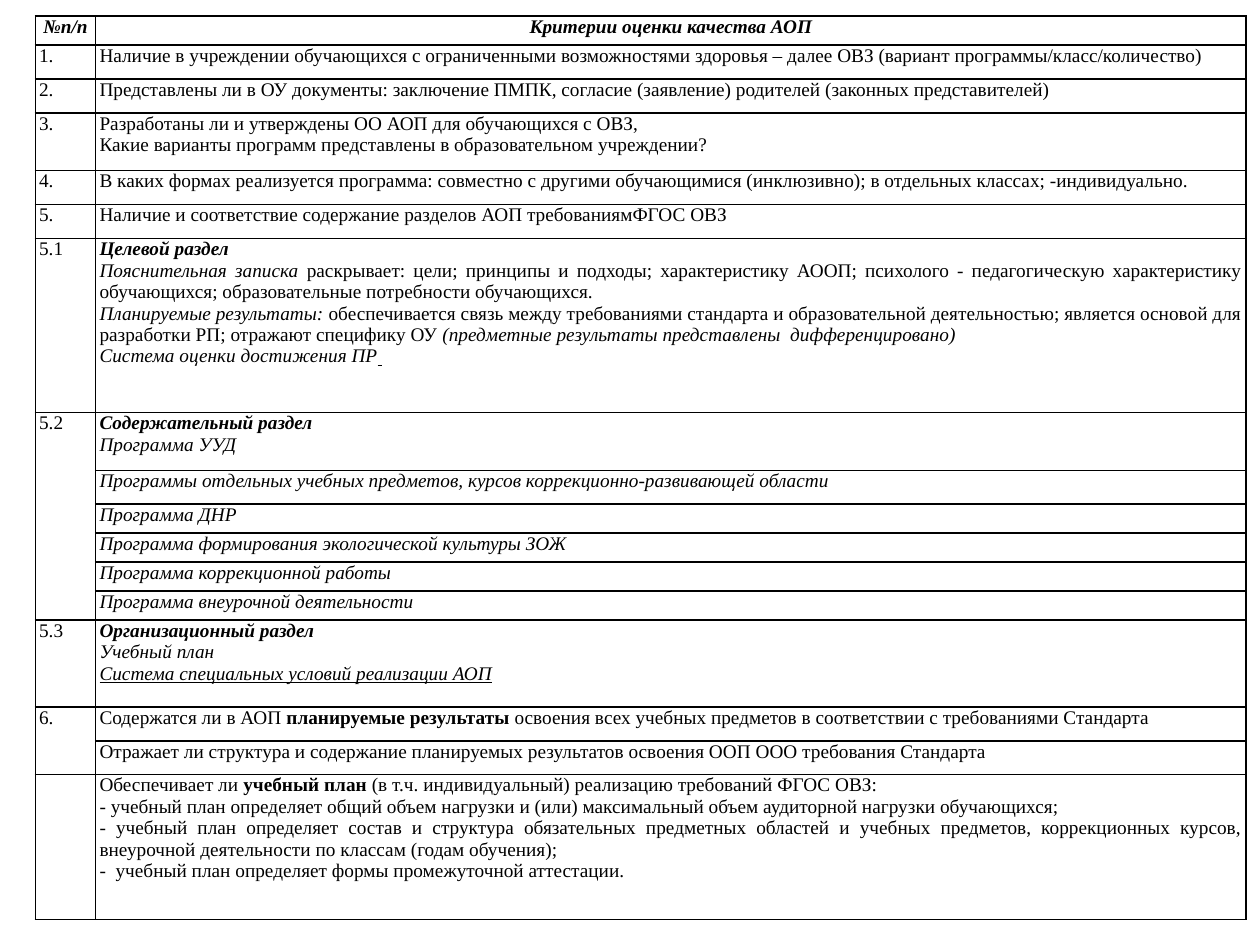
from dataclasses import dataclass
from typing import NamedTuple, Optional

from lxml.etree import SubElement
from pptx import Presentation
from pptx.dml.color import RGBColor as Rgb
from pptx.enum.text import PP_ALIGN as Align
from pptx.oxml import parse_xml
from pptx.oxml.ns import nsdecls, qn
from pptx.util import Inches, Pt

WIDE, HIGH = 10, 7.5
LEFT, TOP = 0.028 * WIDE, 0.017 * HIGH
COLS = (0.048 * WIDE, 0.913 * WIDE)
LINE = 0.23  # height of one text line; rows are counted in lines
ROOMY = 1.17
FONT, SIZE = "Times New Roman", 11
COLORS = {"ink": "000000"}


class Run(NamedTuple):
    text: str
    style: str = ""  # any of b, i, u


@dataclass
class Row:
    lines: float
    mark: Optional[str]  # None joins the row to the one above
    paras: list
    align: Align = Align.JUSTIFY
    style: str = ""


ROWS = [
    Row(1, "№п/п", [[Run("Критерии оценки качества АОП", "bi")]],
        Align.CENTER, "bi"),
    Row(ROOMY, "1.", [[Run(
        "Наличие в учреждении обучающихся с ограниченными возможностями "
        "здоровья – далее ОВЗ (вариант программы/класс/количество)")]]),
    Row(ROOMY, "2.", [[Run(
        "Представлены ли в ОУ документы: заключение ПМПК, согласие "
        "(заявление) родителей (законных представителей)")]]),
    Row(2, "3.", [
        [Run("Разработаны ли и утверждены ОО АОП для обучающихся с ОВЗ,")],
        [Run("Какие варианты программ представлены в образовательном "
             "учреждении?")]]),
    Row(ROOMY, "4.", [[Run(
        "В каких формах реализуется программа: совместно с другими "
        "обучающимися (инклюзивно); в отдельных классах; "
        "-индивидуально.")]]),
    Row(ROOMY, "5.", [[Run(
        "Наличие и соответствие содержание разделов АОП "
        "требованиямФГОС ОВЗ")]]),
    Row(6, "5.1", [
        [Run("Целевой раздел", "bi")],
        [Run("Пояснительная записка", "i"),
         Run(" раскрывает: цели; принципы и подходы; характеристику АООП; "
             "психолого - педагогическую характеристику обучающихся; "
             "образовательные потребности обучающихся.")],
        [Run("Планируемые результаты:", "i"),
         Run(" обеспечивается связь между требованиями стандарта и "
             "образовательной деятельностью; является основой для "
             "разработки РП; отражают специфику ОУ "),
         Run("(предметные результаты представлены  дифференцировано)", "i")],
        [Run("Система оценки достижения ПР", "i"), Run(" ", "iu")]]),
    Row(2, "5.2", [[Run("Содержательный раздел", "bi")],
                   [Run("Программа УУД", "i")]]),
    Row(ROOMY, None, [[Run(
        "Программы отдельных учебных предметов, курсов "
        "коррекционно-развивающей области", "i")]]),
    Row(1, None, [[Run("Программа ДНР", "i")]]),
    Row(1, None, [[Run(
        "Программа формирования экологической культуры ЗОЖ", "i")]]),
    Row(1, None, [[Run("Программа коррекционной работы", "i")]]),
    Row(1, None, [[Run("Программа внеурочной деятельности", "i")]]),
    Row(3, "5.3", [
        [Run("Организационный раздел", "bi")],
        [Run("Учебный план", "i")],
        [Run("Система специальных условий реализации АОП", "iu")]]),
    Row(ROOMY, "6.", [[
        Run("Содержатся ли в АОП "), Run("планируемые результаты", "b"),
        Run(" освоения всех учебных предметов в соответствии с "
            "требованиями Стандарта")]]),
    Row(ROOMY, None, [[Run(
        "Отражает ли структура и содержание планируемых результатов "
        "освоения ООП ООО требования Стандарта")]]),
    Row(5, "", [
        [Run("Обеспечивает ли "), Run("учебный план", "b"),
         Run(" (в т.ч. индивидуальный) реализацию требований ФГОС ОВЗ:")],
        [Run("- учебный план определяет общий объем нагрузки и (или) "
             "максимальный объем аудиторной нагрузки обучающихся;")],
        [Run("- учебный план определяет состав и структура обязательных "
             "предметных областей и учебных предметов, коррекционных курсов, "
             "внеурочной деятельности по классам (годам обучения);")],
        [Run("-  учебный план определяет формы промежуточной аттестации.")]]),
]


def frame(cell) -> None:
    """Clear the fill, set the margins and rule all four sides."""
    cell.fill.background()
    cell.margin_left = cell.margin_right = Inches(0.03)
    cell.margin_top = cell.margin_bottom = 0
    props = cell._tc.get_or_add_tcPr()
    for spot, side in enumerate("LRTB"):
        props.insert(spot, parse_xml(
            f'<a:ln{side} {nsdecls("a")} w="{Pt(1)}"><a:solidFill>'
            f'<a:srgbClr val="{COLORS["ink"]}"/></a:solidFill></a:ln{side}>'))


def write(cell, paras: list, align: Align) -> None:
    """Fill a cell with paragraphs of styled runs."""
    text = cell.text_frame
    for spot, runs in enumerate(paras):
        para = text.add_paragraph() if spot else text.paragraphs[0]
        para.alignment = align
        for item in runs:
            run = para.add_run()
            run.text = item.text
            font = run.font
            font.name, font.size = FONT, Pt(SIZE)
            font.color.rgb = Rgb.from_string(COLORS["ink"])
            font.bold = "b" in item.style
            font.italic = "i" in item.style
            font.underline = "u" in item.style
        SubElement(para._p, qn("a:endParaRPr"), sz=str(SIZE * 100))


def build() -> None:
    deck = Presentation()
    deck.slide_width, deck.slide_height = Inches(WIDE), Inches(HIGH)
    slide = deck.slides.add_slide(deck.slide_layouts[6])

    # Table grid
    tall = LINE * sum(row.lines for row in ROWS)
    table = slide.shapes.add_table(
        len(ROWS), len(COLS), Inches(LEFT), Inches(TOP),
        Inches(sum(COLS)), Inches(tall)).table
    table.first_row = table.horz_banding = False
    for col, width in zip(table.columns, COLS):
        col.width = Inches(width)

    # Rows of criteria
    for spot, row in enumerate(ROWS):
        table.rows[spot].height = Inches(row.lines * LINE)
        mark, body = table.cell(spot, 0), table.cell(spot, 1)
        frame(mark)
        frame(body)
        label = [Run(row.mark, row.style)] if row.mark else []
        write(mark, [label], row.align)
        write(body, row.paras, row.align)

    # Marks that span several rows
    heads = [spot for spot, row in enumerate(ROWS) if row.mark is not None]
    for head, after in zip(heads, heads[1:] + [len(ROWS)]):
        if after - head > 1:
            table.cell(head, 0).merge(table.cell(after - 1, 0))

    deck.save("out.pptx")


if __name__ == "__main__":
    build()
